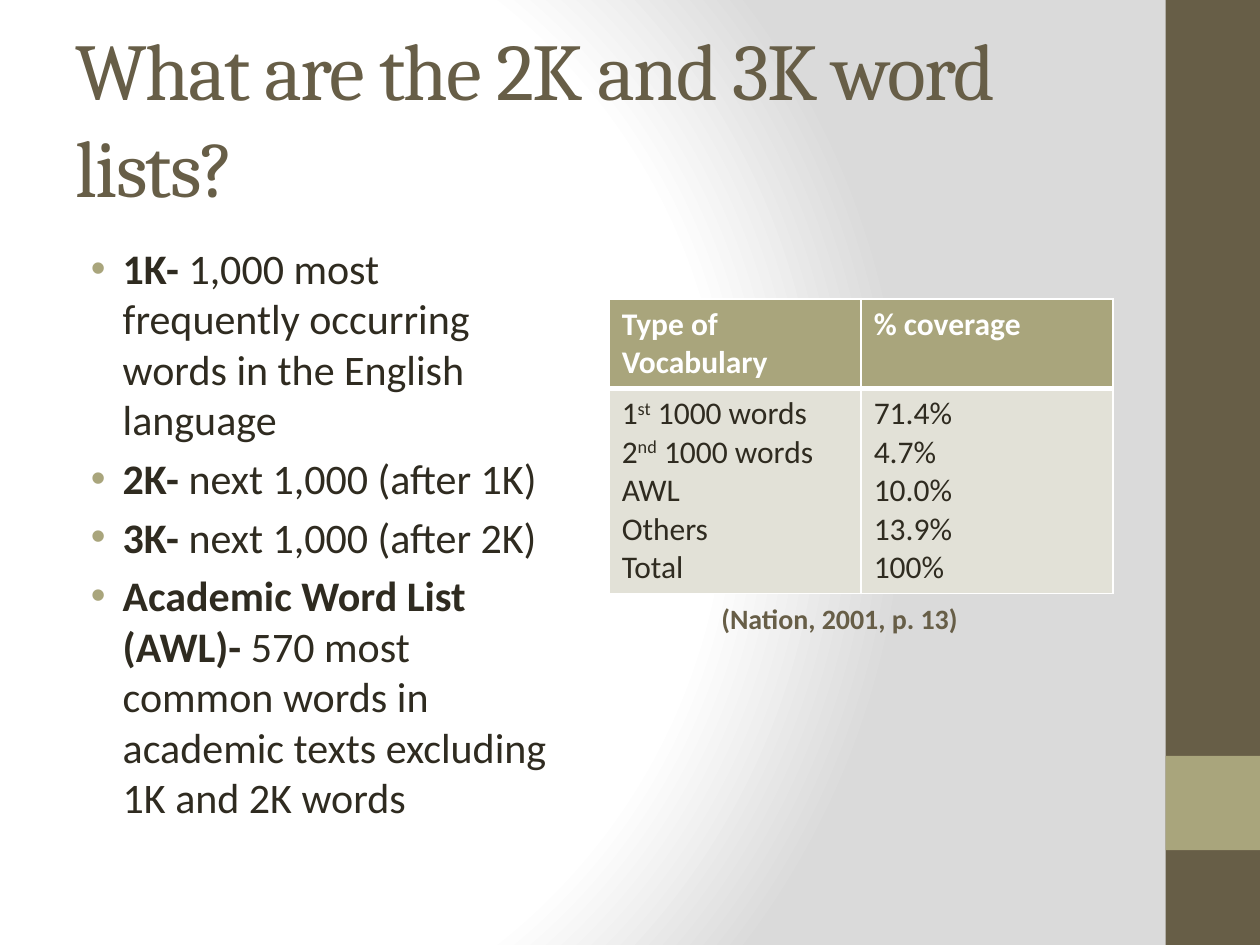
from lxml import etree
from pptx import Presentation
from pptx.dml.color import RGBColor
from pptx.enum.shapes import MSO_SHAPE
from pptx.enum.text import MSO_ANCHOR, MSO_AUTO_SIZE, PP_ALIGN
from pptx.oxml import parse_xml
from pptx.oxml.ns import nsdecls, qn
from pptx.util import Cm, Pt

COLORS = {"brown": "675E47", "olive": "A9A57C", "ink": "2F2B20",
          "pale": "E2E1D7", "white": "FFFFFF", "gray": "DADADA"}

WORD_LISTS = [
    ("1K-", " 1,000 most frequently occurring words in the English language"),
    ("2K-", " next 1,000 (after 1K)"),
    ("3K- ", "next 1,000 (after 2K)"),
    ("Academic Word List (AWL)- ",
     "570 most common words in academic texts excluding 1K and 2K words"),
]
HEADINGS = ["Type of Vocabulary", "% coverage"]
# Each line is a list of (text, is superscript)
VOCABULARY = [
    [("1", False), ("st", True), (" 1000 words", False)],
    [("2", False), ("nd", True), (" 1000 words", False)],
    [("AWL", False)], [("Others", False)], [("Total", False)],
]
COVERAGE = [[(share, False)] for share in ("71.4%", "4.7%", "10.0%", "13.9%", "100%")]


def rgb(name):
    return RGBColor.from_string(COLORS[name])


def style(font, size, color, bold=None, face="Calibri"):
    font.name, font.size, font.bold = face, Pt(size), bold
    font.color.rgb = rgb(color)


def place(shape, box):
    shape.left, shape.top, shape.width, shape.height = (Cm(length) for length in box)


def prepare_frame(placeholder, box, anchor):
    place(placeholder, box)
    frame = placeholder.text_frame
    frame.auto_size = MSO_AUTO_SIZE.NONE
    frame.word_wrap = True
    frame.vertical_anchor = anchor
    return frame


def paint_background(slide):
    stops = "".join(
        f'<a:gs pos="{pos}000"><a:srgbClr val="{COLORS[name]}"/></a:gs>'
        for pos, name in ((0, "white"), (75, "white"), (100, "gray")))
    background = parse_xml(
        f'<p:bg {nsdecls("p", "a")}><p:bgPr><a:gradFill rotWithShape="1">'
        f'<a:gsLst>{stops}</a:gsLst><a:path path="circle">'
        '<a:fillToRect l="20000" t="50000" r="100000" b="50000"/></a:path>'
        '</a:gradFill><a:effectLst/></p:bgPr></p:bg>')
    slide.element.cSld.insert(0, background)


def add_side_band(slide, box):
    left, top, width, height = box
    accent = (left, top + 0.8 * height, width, width)
    for part, color in ((box, "brown"), (accent, "olive")):
        band = slide.shapes.add_shape(MSO_SHAPE.RECTANGLE, *(Cm(v) for v in part))
        band.shadow.inherit = False
        band.fill.solid()
        band.fill.fore_color.rgb = rgb(color)
        band.line.fill.background()


def fill_title(placeholder, box):
    frame = prepare_frame(placeholder, box, MSO_ANCHOR.MIDDLE)
    heading = frame.paragraphs[0]
    heading.alignment = PP_ALIGN.LEFT
    run = heading.add_run()
    run.text = "What are the 2K and 3K word lists?"
    style(heading.font, 46, "brown", face="Cambria")
    run._r.get_or_add_rPr().set("spc", "-100")


def set_bullet(paragraph):
    props = paragraph._p.get_or_add_pPr()
    props.set("marL", str(Cm(0.95)))
    props.set("indent", str(-Cm(0.64)))
    color = etree.Element(qn("a:buClr"))
    etree.SubElement(color, qn("a:srgbClr"), val=COLORS["olive"])
    font = etree.Element(qn("a:buFont"), typeface="Arial")
    char = etree.Element(qn("a:buChar"), char="•")
    # Bullet settings come before the default run properties
    defaults = props.find(qn("a:defRPr"))
    for item in (color, font, char):
        defaults.addprevious(item)


def fill_word_lists(placeholder, box):
    frame = prepare_frame(placeholder, box, MSO_ANCHOR.TOP)
    for index, (term, meaning) in enumerate(WORD_LISTS):
        entry = frame.add_paragraph() if index else frame.paragraphs[0]
        entry.space_before = Pt(4.8)
        style(entry.font, 24, "ink")
        set_bullet(entry)
        for text, bold in ((term, True), (meaning, False)):
            run = entry.add_run()
            run.text = text
            run.font.bold = bold


def fill_citation(placeholder, box):
    frame = prepare_frame(placeholder, box, MSO_ANCHOR.BOTTOM)
    citation = frame.paragraphs[0]
    citation.text = "(Nation, 2001, p. 13) "
    citation.alignment = PP_ALIGN.CENTER
    citation.space_before = Pt(3.2)
    style(citation.font, 16, "brown", True)
    props = citation._p.get_or_add_pPr()
    props.set("marL", "0")
    props.set("indent", "0")
    props.find(qn("a:defRPr")).addprevious(etree.Element(qn("a:buNone")))


def set_borders(cell, bottom):
    props = cell._tc.get_or_add_tcPr()
    for side, width in (("L", 1), ("R", 1), ("T", 1), ("B", bottom)):
        line = etree.SubElement(props, qn(f"a:ln{side}"), w=str(Pt(width)))
        fill = etree.SubElement(line, qn("a:solidFill"))
        etree.SubElement(fill, qn("a:srgbClr"), val=COLORS["white"])


def fill_cell(cell, lines, fill, color, bold, bottom):
    set_borders(cell, bottom)
    cell.fill.solid()
    cell.fill.fore_color.rgb = rgb(fill)
    frame = cell.text_frame
    for index, pieces in enumerate(lines):
        line = frame.add_paragraph() if index else frame.paragraphs[0]
        style(line.font, 18, color, bold)
        for text, raised in pieces:
            run = line.add_run()
            run.text = text
            if raised:
                run._r.get_or_add_rPr().set("baseline", "30000")


def add_coverage_table(slide, box):
    table = slide.shapes.add_table(2, 2, *(Cm(v) for v in box)).table
    table.horz_banding = False
    table.rows[0].height, table.rows[1].height = Cm(1.8), Cm(box[3] - 1.8)
    for column, (heading, lines) in enumerate(zip(HEADINGS, (VOCABULARY, COVERAGE))):
        fill_cell(table.cell(0, column), [[(heading, False)]], "olive", "white", True, 3)
        fill_cell(table.cell(1, column), lines, "pale", "ink", False, 1)


def main():
    deck = Presentation()
    deck.slide_width, deck.slide_height = Cm(25.4), Cm(19.05)
    slide = deck.slides.add_slide(deck.slide_layouts[3])
    title, word_lists, citation = slide.placeholders

    paint_background(slide)
    add_side_band(slide, (23.5, 0, 1.9, 19.05))
    fill_title(title, (1.27, 0.76, 21.16, 3.18))
    fill_word_lists(word_lists, (1.27, 4.76, 10.16, 13.5))
    fill_citation(citation, (11.91, 11.15, 10.16, 1.78))
    add_coverage_table(slide, (12.28, 6.03, 10.16, 5.9))
    deck.save("out.pptx")


if __name__ == "__main__":
    main()
